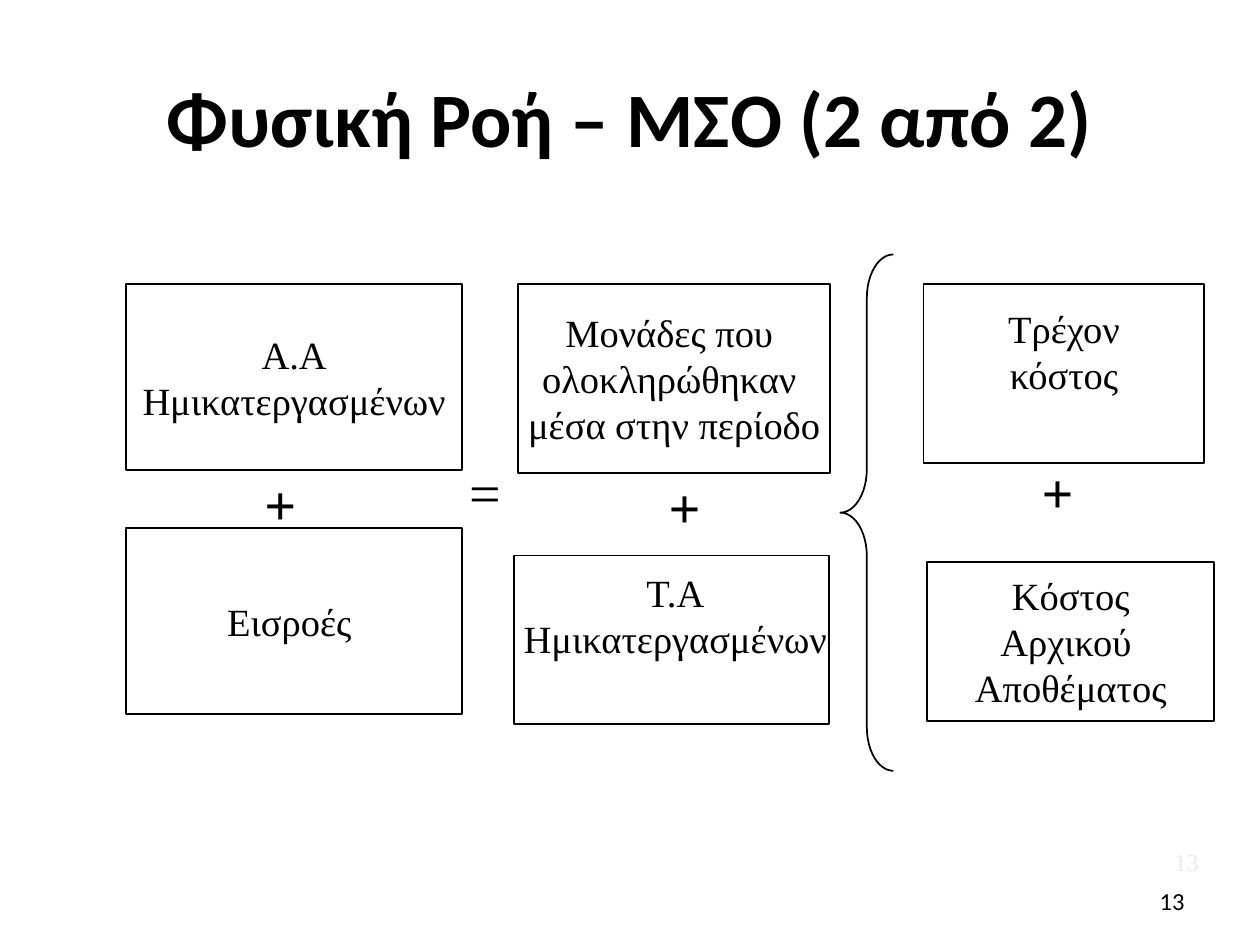
import pptx
import pptx.util
import pptx.dml.color
import pptx.enum.shapes
import pptx.enum.text

Cm, Pt = pptx.util.Cm, pptx.util.Pt
RGB = pptx.dml.color.RGBColor
ALIGN = pptx.enum.text.PP_ALIGN
ANCHOR = pptx.enum.text.MSO_ANCHOR
SHAPE = pptx.enum.shapes.MSO_SHAPE

THEME = {
    "ink": RGB(0, 0, 0), "pale": RGB(0xEB, 0xEB, 0xEB),
    "heading": "Calibri", "body": "Times New Roman",
    "title": 44, "label": 22, "sign": 32, "number": 14, "line": 1,
}

# Content: places are left, top, width, height in cm
TITLE = "Φυσική Ροή – ΜΣΟ (2 από 2)"
PAGE = "13"
ROW_TOP = 5.72
STOCKS = [  # lines, place, extra space under the text
    (["Α.Α", "Ημικατεργασμένων"], (2.54, ROW_TOP, 6.78, 3.76), 0),
    (["Εισροές "], (2.54, 10.64, 6.78, 3.76), 0),
    (["Μονάδες που ", "ολοκληρώθηκαν ", "μέσα στην περίοδο"], (10.44, ROW_TOP, 6.3, 3.81), 0),
    ([], (10.36, 11.2, 6.35, 3.4), 0),
    (["Τρέχον", "κόστος"], (18.62, ROW_TOP, 5.66, 3.61), 0.9),
    (["Κόστος", "Αρχικού ", "Αποθέματος"], (18.69, 11.33, 5.79, 3.2), 0),
]
CLOSING_STOCK = (["Τ.Α", "Ημικατεργασμένων"], (10.29, 11.35, 6.65, 2.11))
SIGNS = [  # sign, left, top, bold
    ("+", 5.08, 9.35, True), ("=", 9.22, 9.09, False),
    ("+", 13.23, 9.4, True), ("+", 20.75, 9.09, True),
]
SIGN_SIZE = (1.16, 1.6)
BRACE = (16.94, 5.13, 1.07, 10.41)
PAGE_NUMBERS = [("pale", "body", (18.5, 16.86, 5.92, 1.02)),
                ("ink", "heading", (18.21, 17.65, 5.92, 1.02))]


def write(shape, lines, size, font="body", color="ink", bold=False,
          align=ALIGN.CENTER, anchor=ANCHOR.MIDDLE, wrap=False):
    frame = shape.text_frame
    frame.text = "\n".join(lines)
    frame.word_wrap = wrap
    frame.vertical_anchor = anchor
    for paragraph in frame.paragraphs:
        paragraph.alignment = align
        for run in paragraph.runs:
            run.font.name = THEME[font]
            run.font.size = Pt(THEME[size])
            run.font.bold = bold
            run.font.color.rgb = THEME[color]


def outline(kind, place):
    shape = slide.shapes.add_shape(kind, *map(Cm, place))
    shape.shadow.inherit = False
    shape.fill.background()
    shape.line.color.rgb = THEME["ink"]
    shape.line.width = Pt(THEME["line"])
    return shape


def textbox(place):
    return slide.shapes.add_textbox(*map(Cm, place))


deck = pptx.Presentation()
deck.slide_width, deck.slide_height = Cm(25.4), Cm(19.05)
slide = deck.slides.add_slide(deck.slide_layouts[6])

# Title and page numbers
write(textbox((1.27, 0.76, 22.86, 3.18)), [TITLE], "title", "heading", bold=True, wrap=True)
for color, font, place in PAGE_NUMBERS:
    write(textbox(place), [PAGE], "number", font, color, align=ALIGN.RIGHT, wrap=True)

# Boxes of the equation
for lines, place, space_under in STOCKS:
    stock = outline(SHAPE.RECTANGLE, place)
    if lines:
        write(stock, lines, "label")
        stock.text_frame.margin_bottom += Cm(space_under)

closing_lines, closing_place = CLOSING_STOCK
write(textbox(closing_place), closing_lines, "label", anchor=ANCHOR.TOP)

# Plus and equals signs
for sign, left, top, bold in SIGNS:
    write(textbox((left, top, *SIGN_SIZE)), [sign], "sign", bold=bold,
          align=ALIGN.LEFT, anchor=ANCHOR.TOP)

# Brace that splits the costs
brace = outline(SHAPE.LEFT_BRACE, BRACE)
brace.adjustments[0] = 0.82
brace.adjustments[1] = 0.5

deck.save("out.pptx")
